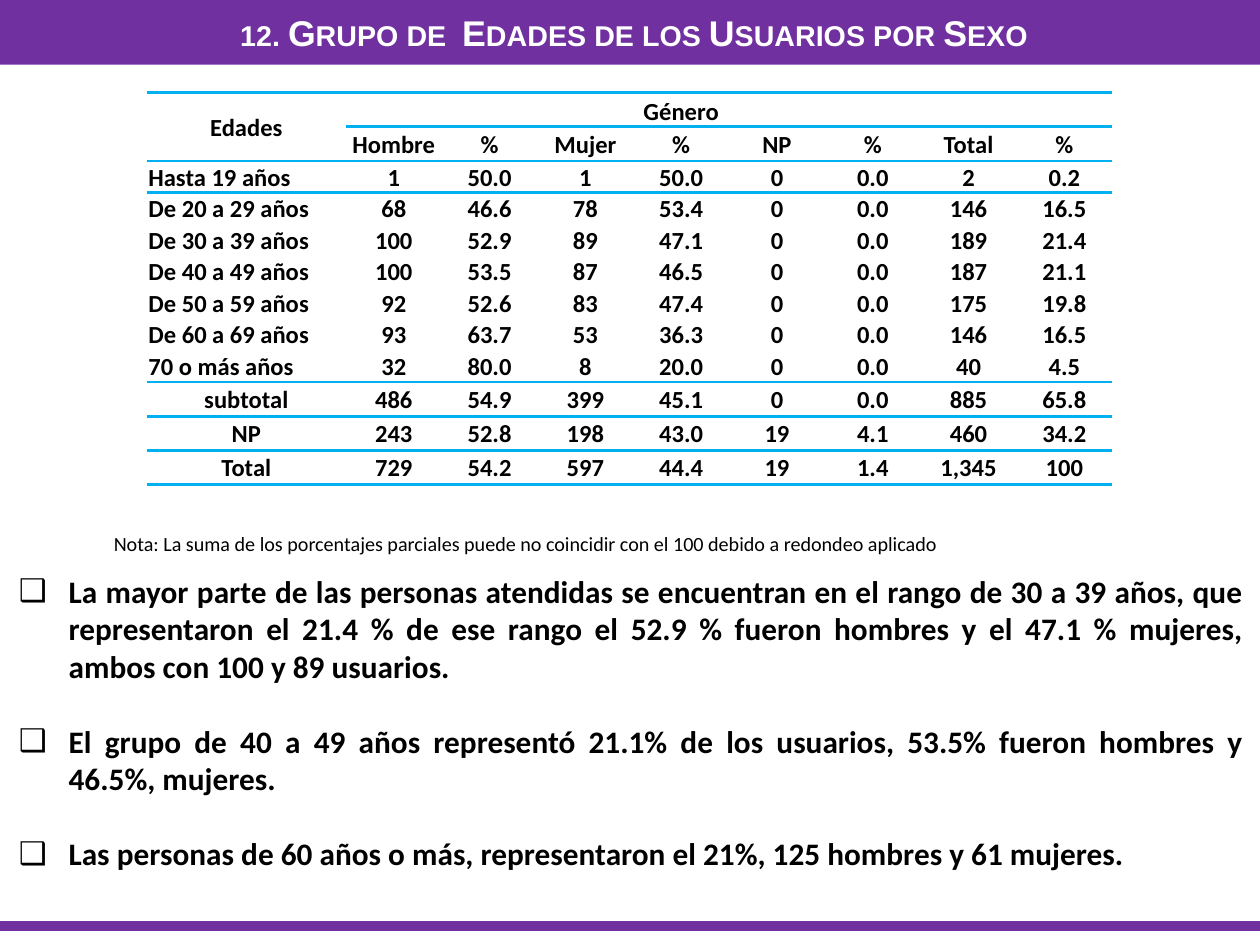
from lxml.etree import SubElement
from pptx import Presentation
from pptx.dml.color import RGBColor
from pptx.enum.shapes import MSO_CONNECTOR, MSO_SHAPE
from pptx.enum.text import MSO_ANCHOR, PP_ALIGN
from pptx.oxml import parse_xml
from pptx.oxml.ns import nsdecls, qn
from pptx.util import Pt

PURPLE, CYAN, BLACK, WHITE = "7030A0", "00B0F0", "000000", "FFFFFF"
W, H = 564.48, 423.36
NO_STYLE = "{2D5ABB26-0587-4C30-8999-92F81FD0307C}"

ROWS = [
    ["Edades", "Género", "", "", "", "", "", "", ""],
    ["", "Hombre", "%", "Mujer", "%", "NP", "%", "Total", "%"],
    ["Hasta 19 años", "1", "50.0", "1", "50.0", "0", "0.0", "2", "0.2"],
    ["De 20 a 29 años", "68", "46.6", "78", "53.4", "0", "0.0", "146", "16.5"],
    ["De 30 a 39 años", "100", "52.9", "89", "47.1", "0", "0.0", "189", "21.4"],
    ["De 40 a 49 años", "100", "53.5", "87", "46.5", "0", "0.0", "187", "21.1"],
    ["De 50 a 59 años", "92", "52.6", "83", "47.4", "0", "0.0", "175", "19.8"],
    ["De 60 a 69 años", "93", "63.7", "53", "36.3", "0", "0.0", "146", "16.5"],
    ["70 o más años", "32", "80.0", "8", "20.0", "0", "0.0", "40", "4.5"],
    ["subtotal", "486", "54.9", "399", "45.1", "0", "0.0", "885", "65.8"],
    ["NP", "243", "52.8", "198", "43.0", "19", "4.1", "460", "34.2"],
    ["Total", "729", "54.2", "597", "44.4", "19", "1.4", "1,345", "100"],
]
AGE_ROWS = range(2, 9)

FINDINGS = [
    "La mayor parte de las personas atendidas se encuentran en el rango de 30 a 39 años, "
    "que representaron el 21.4 % de ese rango el 52.9 % fueron hombres y el 47.1 % mujeres, "
    "ambos con 100 y 89 usuarios.",
    "El grupo de 40 a 49 años representó 21.1% de los usuarios, 53.5% fueron hombres "
    "y 46.5%, mujeres.",
    "Las personas de 60 años o más, representaron el 21%, 125 hombres y 61 mujeres.",
]


def color(value):
    return RGBColor.from_string(value)


def add_run(p, text, size, hue=BLACK, bold=True, font="Calibri"):
    r = p.add_run()
    r.text = text
    r.font.size, r.font.name, r.font.bold = Pt(size), font, bold
    r.font.color.rgb = color(hue)
    return r


def add_box(slide, x, y, w, h):
    tf = slide.shapes.add_textbox(Pt(x), Pt(y), Pt(w), Pt(h)).text_frame
    tf.word_wrap = True
    return tf


def add_header(slide, x, y, w, h):
    sp = slide.shapes.add_shape(MSO_SHAPE.RECTANGLE, Pt(x), Pt(y), Pt(w), Pt(h))
    sp.shadow.inherit = False
    sp.fill.solid()
    sp.fill.fore_color.rgb = color(PURPLE)
    sp.line.fill.background()
    p = add_box(slide, x + 3.6, y + 1.4, w - 3.6, h - 2.2).paragraphs[0]
    p.alignment = PP_ALIGN.CENTER
    r = add_run(p, "12. Grupo de  Edades de los Usuarios por Sexo", 16, WHITE, font="Arial")
    rPr = r.font._element
    rPr.set("cap", "small")
    shadow = parse_xml(
        f'<a:effectLst {nsdecls("a")}><a:outerShdw blurRad="38100" dist="38100" dir="2700000">'
        '<a:srgbClr val="000000"><a:alpha val="60000"/></a:srgbClr>'
        '</a:outerShdw></a:effectLst>')
    rPr.find(qn("a:solidFill")).addnext(shadow)


def add_footer(slide, x, y, w):
    line = slide.shapes.add_connector(MSO_CONNECTOR.STRAIGHT, Pt(x), Pt(y), Pt(x + w), Pt(y))
    line.line.color.rgb = color(PURPLE)
    line.line.width = Pt(4.5)
    SubElement(line._element.spPr, qn("a:effectLst"))


def add_rule(cell, side):
    ln = SubElement(cell._tc.get_or_add_tcPr(), qn(f"a:ln{side}"), w=str(Pt(1.5)))
    SubElement(SubElement(ln, qn("a:solidFill")), qn("a:srgbClr"), val=CYAN)


def fill_cell(cell, text, row, col):
    cell.margin_left = cell.margin_right = cell.margin_top = Pt(0.7)
    cell.margin_bottom = 0
    age_label = row in AGE_ROWS and col == 0
    low = age_label or (row, col) == (0, 1)
    cell.vertical_anchor = MSO_ANCHOR.BOTTOM if low else MSO_ANCHOR.MIDDLE
    if row not in AGE_ROWS[1:] and (row, col) != (1, 0):
        add_rule(cell, "T")
    if row not in AGE_ROWS[:-1]:
        add_rule(cell, "B")
    cell.fill.solid()
    cell.fill.fore_color.rgb = color(WHITE)
    p = cell.text_frame.paragraphs[0]
    p.alignment = PP_ALIGN.LEFT if age_label else PP_ALIGN.CENTER
    if text:
        add_run(p, text, 11)
    else:
        SubElement(p._p, qn("a:endParaRPr"), sz="1100")


def add_age_table(slide, x, y, w, h):
    label_w, age_h = 89.2, 14.15
    value_w = (w - label_w) / (len(ROWS[0]) - 1)
    other_h = (h - age_h * len(AGE_ROWS)) / (len(ROWS) - len(AGE_ROWS))
    table = slide.shapes.add_table(
        len(ROWS), len(ROWS[0]), Pt(x), Pt(y), Pt(w), Pt(h)).table
    table.first_row = table.horz_banding = False
    table._tbl.tblPr.find(qn("a:tableStyleId")).text = NO_STYLE
    for i, column in enumerate(table.columns):
        column.width = Pt(value_w if i else label_w)
    for i, values in enumerate(ROWS):
        table.rows[i].height = Pt(age_h if i in AGE_ROWS else other_h)
        for j, text in enumerate(values):
            fill_cell(table.cell(i, j), text, i, j)
    table.cell(0, 0).merge(table.cell(1, 0))
    table.cell(0, 1).merge(table.cell(0, 7))


def add_note(slide, x, y, w, h):
    p = add_box(slide, x, y, w, h).paragraphs[0]
    add_run(p, "Nota: La suma de los porcentajes parciales puede no coincidir "
               "con el 100 debido a redondeo aplicado", 9, bold=False)


def add_findings(slide, x, y, w, h):
    tf = add_box(slide, x, y, w, h)
    for i, text in enumerate(FINDINGS):
        p = tf.add_paragraph() if i else tf.paragraphs[0]
        p.alignment = PP_ALIGN.JUSTIFY
        if i:
            p.space_before = Pt(16.8)
        pPr = p._p.get_or_add_pPr()
        pPr.set("marL", str(Pt(22.3)))
        pPr.set("indent", str(-Pt(22.3)))
        SubElement(pPr, qn("a:buFont"), typeface="Arial")
        SubElement(pPr, qn("a:buChar"), char="❑")
        add_run(p, text, 14)


def main():
    prs = Presentation()
    prs.slide_width, prs.slide_height = Pt(W), Pt(H)
    slide = prs.slides.add_slide(prs.slide_layouts[6])
    add_footer(slide, 0, 414.7, W)
    add_header(slide, 0, 0, W, 29)
    add_findings(slide, 1.4, 252.7, W - 1.4, 160)
    add_note(slide, 43.9, 234.7, 388, 18)
    add_age_table(slide, 65.8, 41.5, 432.7, 175.7)
    prs.save("out.pptx")


if __name__ == "__main__":
    main()
